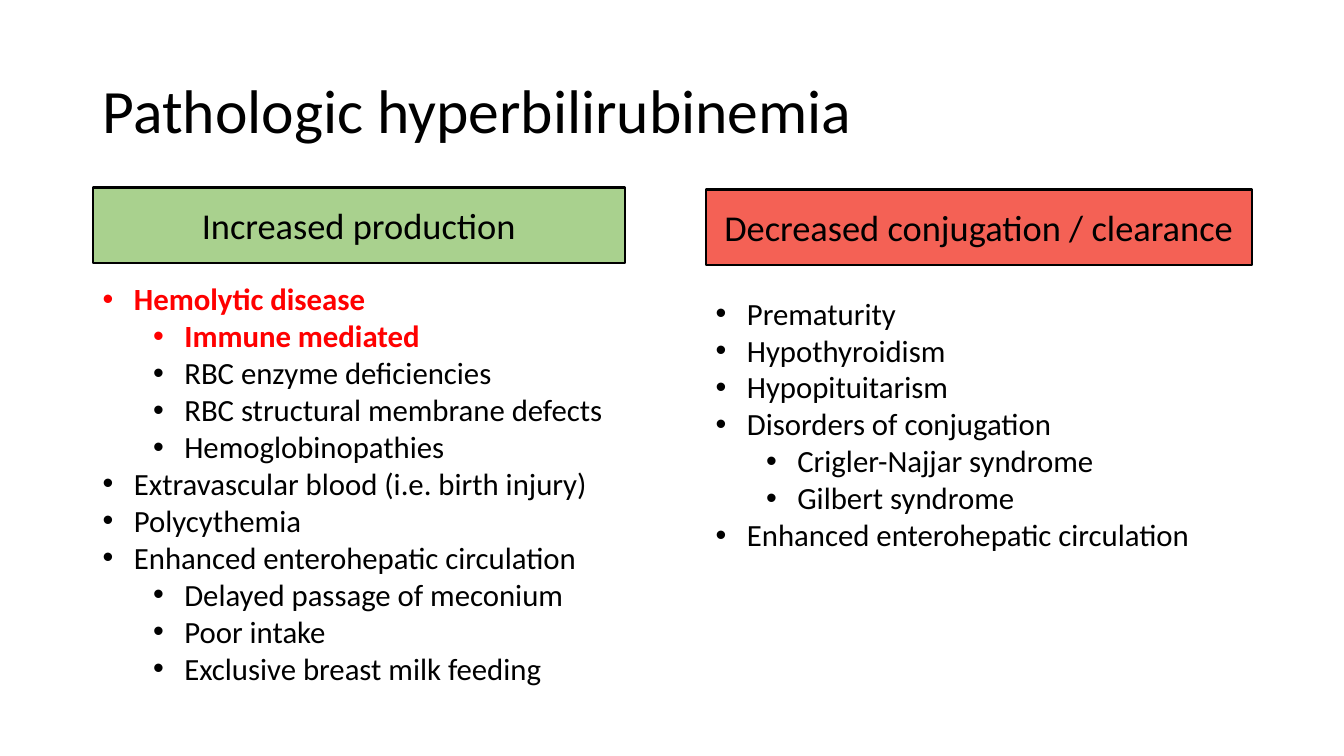
from dataclasses import dataclass

from lxml import etree
from pptx import Presentation
from pptx.dml.color import RGBColor
from pptx.enum.shapes import MSO_SHAPE
from pptx.enum.text import MSO_ANCHOR, MSO_AUTO_SIZE, PP_ALIGN
from pptx.oxml.ns import qn
from pptx.slide import Slide
from pptx.util import Inches, Pt

RECTANGLE = MSO_SHAPE.RECTANGLE
MIDDLE = MSO_ANCHOR.MIDDLE
CENTER = PP_ALIGN.CENTER
GROW = MSO_AUTO_SIZE.SHAPE_TO_FIT_TEXT

FONT = "Calibri"
BLACK = "000000"
RED = "FF0000"
LEFT_MARGIN = 0.92
HANGING = 0.31
LEVEL_STEP = 0.5
HEADING_HEIGHT = 0.75


@dataclass
class Cause:
    text: str
    level: int = 0
    key: bool = False


@dataclass
class Mechanism:
    heading: str
    fill: str
    left: float
    width: float
    heading_top: float
    causes_top: float
    causes_height: float
    causes: list[Cause]


MECHANISMS = [
    Mechanism("Increased production", "A9D18E", LEFT_MARGIN, 5.28, 1.86, 2.73, 4.17, [
        Cause("Hemolytic disease", key=True),
        Cause("Immune mediated", 1, key=True),
        Cause("RBC enzyme deficiencies", 1),
        Cause("RBC structural membrane defects", 1),
        Cause("Hemoglobinopathies", 1),
        Cause("Extravascular blood (i.e. birth injury)"),
        Cause("Polycythemia"),
        Cause("Enhanced enterohepatic circulation"),
        Cause("Delayed passage of meconium", 1),
        Cause("Poor intake", 1),
        Cause("Exclusive breast milk feeding", 1),
    ]),
    Mechanism("Decreased conjugation / clearance", "F46155", 7, 5.42, 1.88, 2.87, 2.69, [
        Cause("Prematurity"),
        Cause("Hypothyroidism"),
        Cause("Hypopituitarism"),
        Cause("Disorders of conjugation"),
        Cause("Crigler-Najjar syndrome", 1),
        Cause("Gilbert syndrome", 1),
        Cause("Enhanced enterohepatic circulation"),
    ]),
]


def rgb(value: str) -> RGBColor:
    return RGBColor.from_string(value)


def write(paragraph, text: str, size: int, color: str = BLACK, bold: bool = False) -> None:
    paragraph.text = text
    font = paragraph.runs[0].font
    font.name = FONT
    font.size = Pt(size)
    font.bold = bold
    font.color.rgb = rgb(color)


def add_bullet(paragraph, level: int) -> None:
    paragraph.level = level
    properties = paragraph._p.get_or_add_pPr()
    properties.set("marL", str(Inches(HANGING + LEVEL_STEP * level)))
    properties.set("indent", str(Inches(-HANGING)))
    etree.SubElement(properties, qn("a:buFont"), typeface="Arial")
    etree.SubElement(properties, qn("a:buChar"), char="•")


def draw_title(slide: Slide, text: str) -> None:
    title = slide.shapes.add_textbox(
        Inches(LEFT_MARGIN), Inches(0.4), Inches(11.5), Inches(1.45)).text_frame
    title.word_wrap = True
    title.vertical_anchor = MIDDLE
    title.paragraphs[0].line_spacing = 0.9
    write(title.paragraphs[0], text, 44)


def draw_heading(slide: Slide, mechanism: Mechanism) -> None:
    heading = slide.shapes.add_shape(
        RECTANGLE, Inches(mechanism.left), Inches(mechanism.heading_top),
        Inches(mechanism.width), Inches(HEADING_HEIGHT))
    heading.shadow.inherit = False
    heading.fill.solid()
    heading.fill.fore_color.rgb = rgb(mechanism.fill)
    heading.line.color.rgb = rgb(BLACK)
    heading.line.width = Pt(1.5)
    heading.text_frame.word_wrap = True
    heading.text_frame.vertical_anchor = MIDDLE
    paragraph = heading.text_frame.paragraphs[0]
    paragraph.alignment = CENTER
    write(paragraph, mechanism.heading, 26)


def draw_causes(slide: Slide, mechanism: Mechanism) -> None:
    causes = slide.shapes.add_textbox(
        Inches(mechanism.left), Inches(mechanism.causes_top),
        Inches(mechanism.width), Inches(mechanism.causes_height)).text_frame
    causes.word_wrap = True
    causes.auto_size = GROW
    causes.text = "\n".join(cause.text for cause in mechanism.causes)
    for paragraph, cause in zip(causes.paragraphs, mechanism.causes):
        add_bullet(paragraph, cause.level)
        write(paragraph, cause.text, 22, RED if cause.key else BLACK, cause.key)


def main() -> None:
    presentation = Presentation()
    presentation.slide_width = Inches(13.33)
    presentation.slide_height = Inches(7.5)
    slide = presentation.slides.add_slide(presentation.slide_layouts[6])
    draw_title(slide, "Pathologic hyperbilirubinemia")
    for mechanism in MECHANISMS:
        draw_heading(slide, mechanism)
        draw_causes(slide, mechanism)
    presentation.save("out.pptx")


if __name__ == "__main__":
    main()
